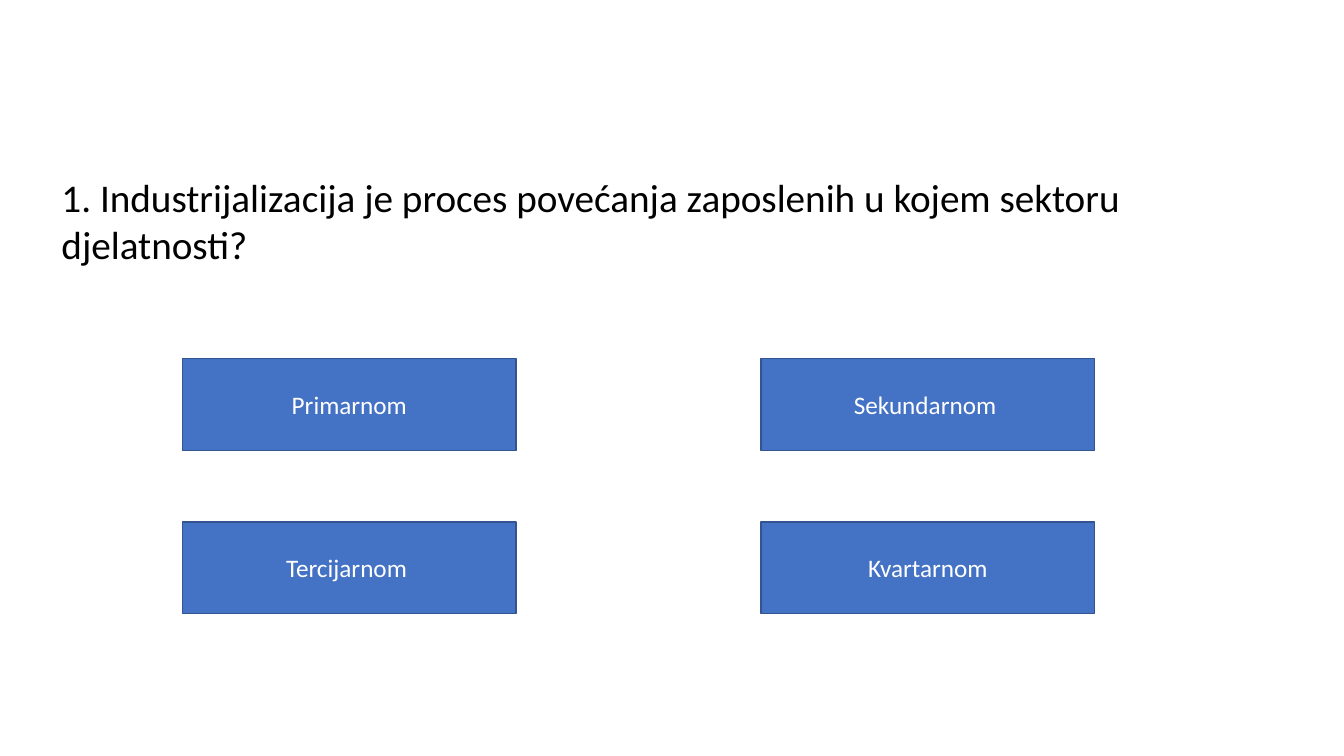
from pptx import Presentation
from pptx.dml.color import RGBColor
from pptx.enum.shapes import MSO_SHAPE
from pptx.enum.text import MSO_ANCHOR, MSO_AUTO_SIZE, PP_ALIGN
from pptx.util import Cm, Pt

RECTANGLE = MSO_SHAPE.RECTANGLE
MIDDLE = MSO_ANCHOR.MIDDLE
CENTER = PP_ALIGN.CENTER
FIT_SHAPE = MSO_AUTO_SIZE.SHAPE_TO_FIT_TEXT

BLACK = RGBColor(0x00, 0x00, 0x00)
WHITE = RGBColor(0xFF, 0xFF, 0xFF)
BLUE = RGBColor(0x44, 0x72, 0xC4)
DARK_BLUE = RGBColor(0x32, 0x54, 0x91)

QUESTION = "1. Industrijalizacija je proces povećanja zaposlenih u kojem sektoru djelatnosti?"
ANSWERS = [["Primarnom", "Sekundarnom "], ["Tercijarnom ", "Kvartarnom"]]


class QuizPage:
    """Draw the question and answer boxes of a quiz slide in one style."""

    font_name = "Calibri"

    def __init__(self, deck):
        self.page = deck.slides.add_slide(deck.slide_layouts[6])

    def set_text(self, shape, text, size, color):
        frame = shape.text_frame
        frame.word_wrap = True
        frame.text = text
        para = frame.paragraphs[0]
        font = para.runs[0].font
        font.name = self.font_name
        font.size = Pt(size)
        font.color.rgb = color
        return frame, para

    def question(self, text, left, top, width, height):
        box = self.page.shapes.add_textbox(Cm(left), Cm(top), Cm(width), Cm(height))
        frame, _ = self.set_text(box, text, 28, BLACK)
        frame.auto_size = FIT_SHAPE

    def answer(self, text, left, top, width, height):
        box = self.page.shapes.add_shape(RECTANGLE, Cm(left), Cm(top), Cm(width), Cm(height))
        box.shadow.inherit = False
        box.fill.solid()
        box.fill.fore_color.rgb = BLUE
        box.line.color.rgb = DARK_BLUE
        box.line.width = Pt(1)
        frame, para = self.set_text(box, text, 18, WHITE)
        frame.vertical_anchor = MIDDLE
        para.alignment = CENTER


def main():
    deck = Presentation()
    deck.slide_width = Cm(33.87)
    deck.slide_height = Cm(19.05)
    quiz = QuizPage(deck)
    quiz.question(QUESTION, 1.3, 4.24, 31.65, 2.64)
    for row, answers in enumerate(ANSWERS):
        for column, text in enumerate(answers):
            quiz.answer(text, 4.6 + column * 14.58, 9.04 + row * 4.11, 8.41, 2.31)
    deck.save("out.pptx")


if __name__ == "__main__":
    main()
